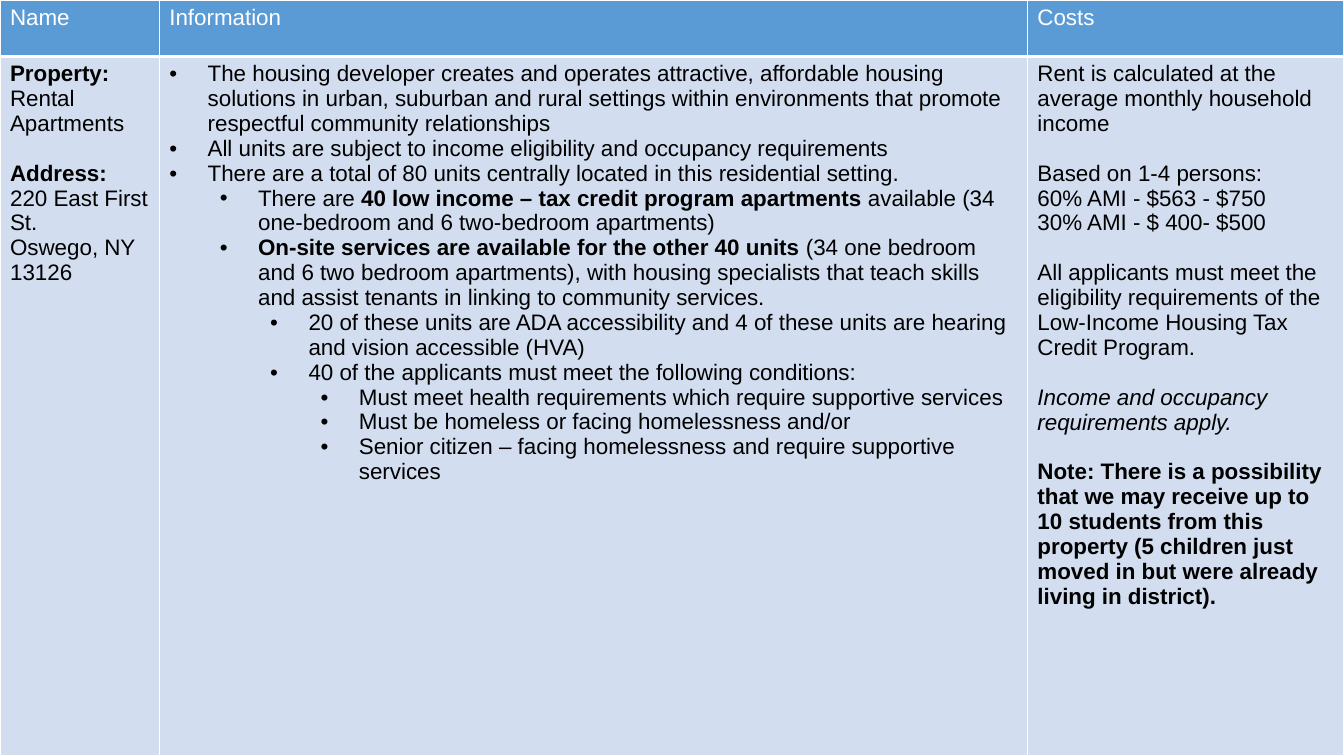
from lxml import etree
from pptx import Presentation
from pptx.dml.color import RGBColor
from pptx.oxml.ns import qn
from pptx.util import Inches, Pt

COLOURS = {"header": "5B9BD5", "body": "D2DEEF", "border": "FFFFFF",
           "header_text": "FFFFFF", "body_text": "000000"}
COLUMNS = [1.58, 8.61, 3.14]
ROWS = [0.56, 6.94]
BLANK_LAYOUT = 6

HEADINGS = ["Name", "Information", "Costs"]

# Paragraphs: spans are (text, style); "gap" leaves one line free above
PROPERTY = [
    {"spans": [("Property:", "bold")]},
    {"spans": [("Rental Apartments", "")]},
    {"spans": [("Address:", "bold")], "gap": True},
    {"spans": [("220 East First St.", "")]},
    {"spans": [("Oswego, NY 13126", "")]},
]
INFORMATION = [
    {"level": level, "spans": spans} for level, spans in [
        (0, [("The housing developer creates and operates attractive, affordable "
              "housing solutions in urban, suburban and rural settings within "
              "environments that promote respectful community relationships", "")]),
        (0, [("All units are subject to income eligibility and occupancy requirements", "")]),
        (0, [("There are a total of 80 units centrally located in this "
              "residential setting.", "")]),
        (1, [("There are ", ""),
             ("40 low income – tax credit program apartments ", "bold"),
             ("available (34 one-bedroom and 6 two-bedroom apartments)", "")]),
        (1, [("On-site services are available for the other 40 units ", "bold"),
             ("(34 one bedroom and 6 two bedroom apartments), with housing "
              "specialists that teach skills and assist tenants in linking to "
              "community services.", "")]),
        (2, [("20 of these units are ADA accessibility and 4 of these units are "
              "hearing and vision accessible (HVA)", "")]),
        (2, [("40 of the applicants must meet the following conditions:", "")]),
        (3, [("Must meet health requirements which require supportive services", "")]),
        (3, [("Must be homeless or facing homelessness and/or", "")]),
        (3, [("Senior citizen – facing homelessness and require supportive services", "")]),
    ]
]
COSTS = [
    {"spans": [("Rent is calculated at the average monthly household income", "")]},
    {"spans": [("Based on 1-4 persons:", "")], "gap": True},
    {"spans": [("60% AMI - $563 - $750", "")]},
    {"spans": [("30% AMI - $ 400- $500", "")]},
    {"spans": [("All applicants must meet the eligibility requirements of the "
                "Low-Income Housing Tax Credit Program.", "")], "gap": True},
    {"spans": [("Income and occupancy requirements apply.", "italic")], "gap": True},
    {"spans": [("Note: There is a possibility that we may receive up to 10 students "
                "from this property (5 children just moved in but were already "
                "living in district).", "bold")], "gap": True},
]


class SlideBuilder:
    """Holds the text style and the current slide."""
    font_name = "Arial"
    font_size = Pt(16)
    line_gap = Pt(17.8)
    bullet_step = 0.5
    bullet_hang = 0.38

    def __init__(self, page):
        self.page = page

    def table(self, columns, rows):
        frame = self.page.shapes.add_table(
            len(rows), len(columns), 0, 0, Inches(sum(columns)), Inches(sum(rows)))
        table = frame.table
        table.first_row = table.horz_banding = False
        for column, width in zip(table.columns, columns):
            column.width = Inches(width)
        for row, height in zip(table.rows, rows):
            row.height = Inches(height)
        return table

    def cell(self, cell, paragraphs, fill, text_colour, bottom_width=1):
        # Borders come before the fill in the cell properties
        for side in "LRTB":
            self.border(cell, side, bottom_width if side == "B" else 1)
        cell.fill.solid()
        cell.fill.fore_color.rgb = RGBColor.from_string(COLOURS[fill])
        frame = cell.text_frame
        for index, content in enumerate(paragraphs):
            para = frame.add_paragraph() if index else frame.paragraphs[0]
            self.paragraph(para, content, text_colour)

    def border(self, cell, side, width):
        properties = cell._tc.get_or_add_tcPr()
        line = etree.SubElement(properties, qn(f"a:ln{side}"), w=str(Pt(width)))
        solid = etree.SubElement(line, qn("a:solidFill"))
        etree.SubElement(solid, qn("a:srgbClr"), val=COLOURS["border"])

    def paragraph(self, para, content, text_colour):
        spans = content["spans"]
        if content.get("gap"):
            para.space_before = self.line_gap
        if "level" in content:
            self.bullet(para, content["level"])
        font = para.font
        font.name, font.size = self.font_name, self.font_size
        font.color.rgb = RGBColor.from_string(COLOURS[text_colour])
        shared = len(spans) == 1
        for text, style in spans:
            span = para.add_run()
            span.text = text
            target = font if shared else span.font
            target.bold = style == "bold"
            target.italic = style == "italic"

    def bullet(self, para, level):
        para.level = level
        properties = para._p.get_or_add_pPr()
        properties.set("marL", str(Inches(self.bullet_hang + level * self.bullet_step)))
        properties.set("indent", str(-Inches(self.bullet_hang)))
        colour = etree.SubElement(properties, qn("a:buClr"))
        etree.SubElement(colour, qn("a:srgbClr"), val=COLOURS["body_text"])
        etree.SubElement(properties, qn("a:buFont"), typeface=self.font_name)
        etree.SubElement(properties, qn("a:buChar"), char="•")


def main():
    deck = Presentation()
    deck.slide_width, deck.slide_height = Inches(13.33), Inches(7.5)
    page = deck.slides.add_slide(deck.slide_layouts[BLANK_LAYOUT])
    builder = SlideBuilder(page)
    table = builder.table(COLUMNS, ROWS)

    # Header row
    for column, heading in enumerate(HEADINGS):
        builder.cell(table.cell(0, column), [{"spans": [(heading, "")]}],
                     "header", "header_text", bottom_width=3)

    # Property details
    for column, paragraphs in enumerate([PROPERTY, INFORMATION, COSTS]):
        builder.cell(table.cell(1, column), paragraphs, "body", "body_text")

    deck.save("out.pptx")


if __name__ == "__main__":
    main()
